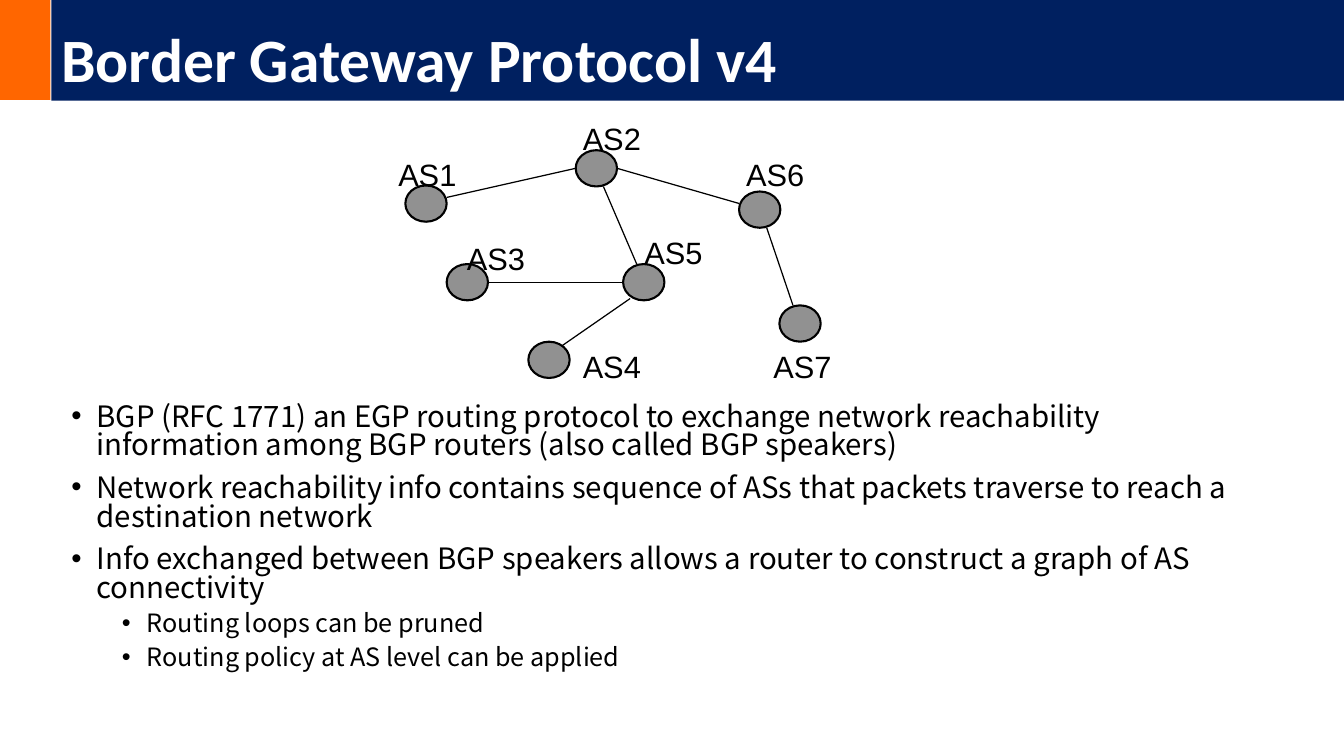
from lxml import etree
from pptx import Presentation
from pptx.dml.color import RGBColor
from pptx.enum.shapes import MSO_CONNECTOR, MSO_SHAPE
from pptx.enum.text import MSO_ANCHOR
from pptx.oxml.ns import qn
from pptx.util import Inches, Pt

RECTANGLE = MSO_SHAPE.RECTANGLE
OVAL = MSO_SHAPE.OVAL
STRAIGHT = MSO_CONNECTOR.STRAIGHT
BOTTOM = MSO_ANCHOR.BOTTOM

COLORS = {"accent": "FF6600", "banner": "002060", "title": "FFFFFF",
          "text": "000000", "node": "919191", "line": "000000"}
SLIDE_WIDTH, SLIDE_HEIGHT = 13.33, 7.5
HEADER_BOX = (0, 0, SLIDE_WIDTH, 1)
NETWORK_BOX = (3.95, 1.19, 4.3, 2.63)
BODY_BOX = (0.61, 3.97, 12.03, 3.07)
NODE_WIDTH, NODE_HEIGHT = 0.41, 0.36
LABEL_WIDTH, LABEL_HEIGHT = 0.58, 0.37

SYSTEMS = {
    "AS1": ((0.07, 0.65), (0, 0.36)),
    "AS2": ((1.76, 0.3), (1.83, 0)),
    "AS3": ((0.48, 1.43), (0.68, 1.19)),
    "AS4": ((1.29, 2.2), (1.83, 2.26)),
    "AS5": ((2.23, 1.43), (2.44, 1.13)),
    "AS6": ((3.38, 0.71), (3.45, 0.36)),
    "AS7": ((3.78, 1.84), (3.72, 2.26)),
}
LINKS = [
    ("AS1", (1, 0.33), "AS2", (0, 0.5)),
    ("AS2", (0.67, 1), "AS5", (0.33, 0)),
    ("AS2", (1, 0.5), "AS6", (0, 0.33)),
    ("AS5", (0, 0.5), "AS3", (1, 0.5)),
    ("AS5", (0.17, 0.95), "AS4", (0.83, 0.1)),
    ("AS6", (0.67, 1), "AS7", (0.33, 0)),
]
BULLETS = [
    (0, "BGP (RFC 1771) an EGP routing protocol to exchange network reachability "
        "information among BGP routers (also called BGP speakers)"),
    (0, "Network reachability info contains sequence of ASs that packets traverse "
        "to reach a destination network"),
    (0, "Info exchanged between BGP speakers allows a router to construct a graph "
        "of AS connectivity"),
    (1, "Routing loops can be pruned"),
    (1, "Routing policy at AS level can be applied"),
]
LEVEL_STYLES = [
    {"size": 21, "line": 0.8, "before": 10.5, "margin": 0.25},
    {"size": 18, "line": 0.9, "before": 5, "margin": 0.75},
]


def color(name):
    return RGBColor.from_string(COLORS[name])


def add_run(paragraph, text, font, size, color_name, bold=False):
    run = paragraph.add_run()
    run.text = text
    run.font.name = font
    run.font.size = Pt(size)
    run.font.bold = bold
    run.font.color.rgb = color(color_name)


def add_filled_shape(slide, kind, box, fill, line_width=0):
    shape = slide.shapes.add_shape(kind, *map(Inches, box))
    shape.shadow.inherit = False
    shape.fill.solid()
    shape.fill.fore_color.rgb = color(fill)
    if line_width:
        shape.line.color.rgb = color("line")
        shape.line.width = Pt(line_width)
    else:
        shape.line.fill.background()
    return shape


def add_header(slide, box):
    left, top, width, height = box
    accent_width = 0.5
    add_filled_shape(slide, RECTANGLE, (left, top, accent_width, height - 0.01), "accent")
    banner_left = left + accent_width + 0.01
    banner = add_filled_shape(
        slide, RECTANGLE, (banner_left, top, left + width - banner_left, height), "banner")
    frame = banner.text_frame
    frame.word_wrap = True
    frame.vertical_anchor = BOTTOM
    paragraph = frame.paragraphs[0]
    paragraph.alignment = 1
    paragraph.line_spacing = 0.9
    add_run(paragraph, "Border Gateway Protocol v4", "Calibri", 44, "title", True)


def add_link(slide, start, end):
    connector = slide.shapes.add_connector(STRAIGHT, *map(Inches, start + end))
    connector.line.color.rgb = color("line")
    connector.line.width = Pt(0.88)
    etree.SubElement(connector._element.spPr, qn("a:effectLst"))


def add_label(slide, text, left, top):
    label = slide.shapes.add_textbox(
        *map(Inches, (left, top, LABEL_WIDTH, LABEL_HEIGHT)))
    frame = label.text_frame
    frame.word_wrap = False
    frame.margin_left = frame.margin_right = frame.margin_top = frame.margin_bottom = 0
    add_run(frame.paragraphs[0], text, "Arial", 22, "text")


def add_network(slide, box):
    left, top = box[:2]

    def node_point(name, share):
        x, y = SYSTEMS[name][0]
        return (left + x + share[0] * NODE_WIDTH, top + y + share[1] * NODE_HEIGHT)

    for name in SYSTEMS:
        node_box = node_point(name, (0, 0)) + (NODE_WIDTH, NODE_HEIGHT)
        add_filled_shape(slide, OVAL, node_box, "node", 1.5)
    for source, source_share, target, target_share in LINKS:
        add_link(slide, node_point(source, source_share), node_point(target, target_share))
    for name, (_, (x, y)) in SYSTEMS.items():
        add_label(slide, name, left + x, top + y)


def add_bullets(slide, box):
    frame = slide.shapes.add_textbox(*map(Inches, box)).text_frame
    frame.word_wrap = True
    for index, (level, text) in enumerate(BULLETS):
        style = LEVEL_STYLES[level]
        paragraph = frame.add_paragraph() if index else frame.paragraphs[0]
        paragraph.level = level
        paragraph.line_spacing = style["line"]
        paragraph.space_before = Pt(style["before"])
        properties = paragraph._p.get_or_add_pPr()
        properties.set("marL", str(Inches(style["margin"])))
        properties.set("indent", str(Inches(-0.25)))
        etree.SubElement(properties, qn("a:buFont"), typeface="Arial")
        etree.SubElement(properties, qn("a:buChar"), char="•")
        add_run(paragraph, text, "Noto Sans CJK KR", style["size"], "text")


def main():
    presentation = Presentation()
    presentation.slide_width = Inches(SLIDE_WIDTH)
    presentation.slide_height = Inches(SLIDE_HEIGHT)
    slide = presentation.slides.add_slide(presentation.slide_layouts[6])
    add_header(slide, HEADER_BOX)
    add_bullets(slide, BODY_BOX)
    add_network(slide, NETWORK_BOX)
    presentation.save("out.pptx")


if __name__ == "__main__":
    main()
